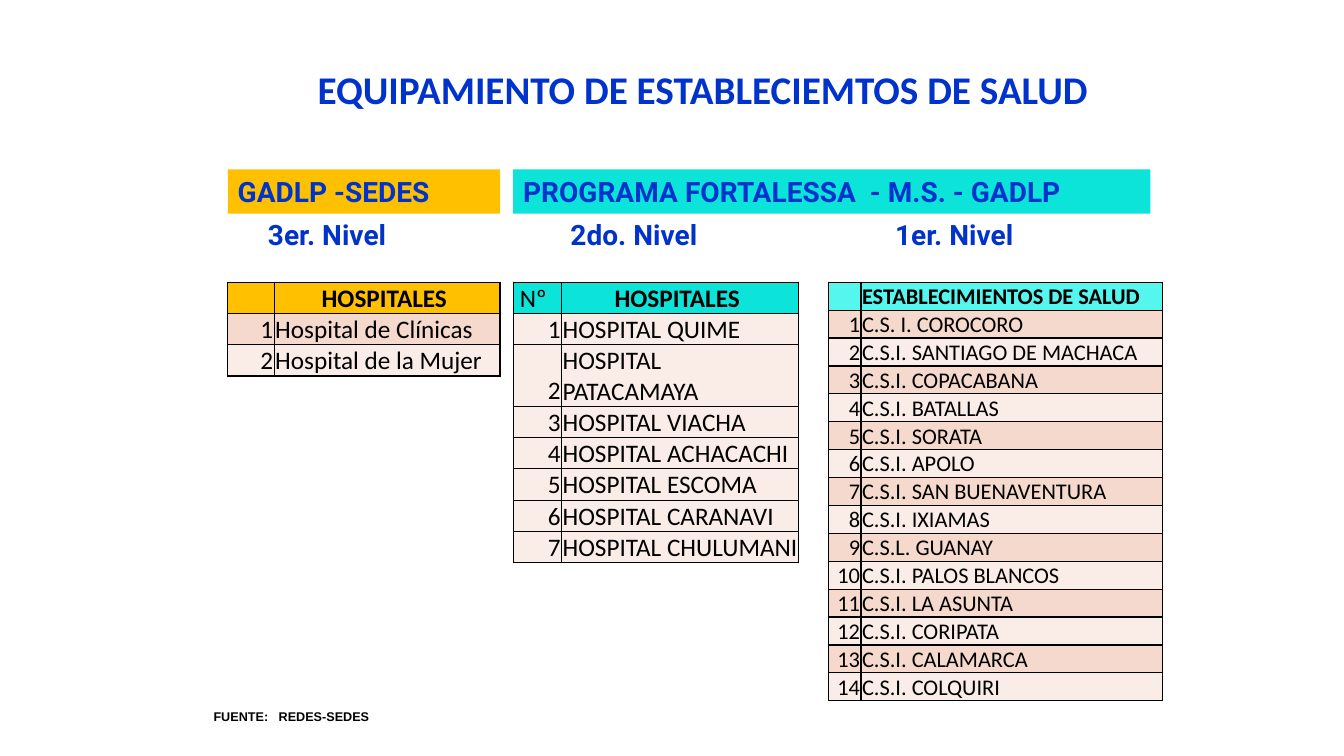
from dataclasses import dataclass

from lxml import etree
from pptx import Presentation
from pptx.dml.color import RGBColor
from pptx.enum.shapes import MSO_SHAPE
from pptx.enum.text import MSO_ANCHOR, MSO_AUTO_SIZE, PP_ALIGN
from pptx.oxml.ns import qn
from pptx.util import Inches, Pt

RECT = MSO_SHAPE.RECTANGLE
TOP, MIDDLE, BOTTOM = MSO_ANCHOR.TOP, MSO_ANCHOR.MIDDLE, MSO_ANCHOR.BOTTOM
LEFT, CENTER, RIGHT = PP_ALIGN.LEFT, PP_ALIGN.CENTER, PP_ALIGN.RIGHT
FIT, FIXED = MSO_AUTO_SIZE.SHAPE_TO_FIT_TEXT, MSO_AUTO_SIZE.NONE


@dataclass(frozen=True)
class Theme:
    """Colours, fonts and type sizes of the slide."""
    blue: str = "0033CC"
    black: str = "000000"
    gold: str = "FFC000"
    teal: str = "0CE4DA"
    aqua: str = "54F6EE"
    rose: str = "F5D9CC"
    pale: str = "FAEDE7"
    body: str = "Calibri"
    head: str = "Roboto"
    note: str = "Arial"
    title: int = 28
    label: int = 20
    large: int = 18
    small: int = 16
    source: int = 9


THEME = Theme()

URBAN = ["Hospital de Clínicas", "Hospital de la Mujer"]
RURAL = ["HOSPITAL " + name for name in (
    "QUIME", "PATACAMAYA", "VIACHA", "ACHACACHI", "ESCOMA", "CARANAVI",
    "CHULUMANI")]
CENTERS = [
    "C.S. I. COROCORO", "C.S.I. SANTIAGO DE MACHACA", "C.S.I. COPACABANA",
    "C.S.I. BATALLAS", "C.S.I. SORATA", "C.S.I. APOLO",
    "C.S.I. SAN BUENAVENTURA", "C.S.I. IXIAMAS", "C.S.L. GUANAY",
    "C.S.I. PALOS BLANCOS", "C.S.I. LA ASUNTA", "C.S.I. CORIPATA",
    "C.S.I. CALAMARCA", "C.S.I. COLQUIRI"]


def style(para, face, size, color, bold=True, align=LEFT):
    """Format one paragraph."""
    para.alignment = align
    font = para.font
    font.name, font.size, font.bold = face, Pt(size), bold
    font.color.rgb = RGBColor.from_string(color)


def add_title(slide, box, text):
    """Place the slide title in its placeholder."""
    title = slide.shapes.title
    title.left, title.top, title.width, title.height = map(Inches, box)
    frame = title.text_frame
    frame.text = text
    frame.word_wrap, frame.auto_size = False, FIXED
    frame.vertical_anchor = TOP
    para = frame.paragraphs[0]
    para.line_spacing = 1.0
    style(para, THEME.body, THEME.title, THEME.blue)


def add_label(slide, box, text, face, size, color, wrap=False):
    """Place a plain line of text."""
    frame = slide.shapes.add_textbox(*map(Inches, box)).text_frame
    frame.text = text
    frame.word_wrap, frame.auto_size = wrap, FIT
    style(frame.paragraphs[0], face, size, color)


def add_banner(slide, box, text, fill):
    """Place a filled heading bar."""
    bar = slide.shapes.add_shape(RECT, *map(Inches, box))
    bar.shadow.inherit = False
    bar.fill.solid()
    bar.fill.fore_color.rgb = RGBColor.from_string(fill)
    bar.line.fill.background()
    frame = bar.text_frame
    frame.text = text
    frame.word_wrap, frame.auto_size = True, FIT
    frame.vertical_anchor = TOP
    style(frame.paragraphs[0], THEME.head, THEME.label, THEME.blue)


def add_border(cell):
    """Draw thin black lines on all sides of a cell."""
    props = cell._tc.get_or_add_tcPr()
    for side in ("a:lnL", "a:lnR", "a:lnT", "a:lnB"):
        line = etree.SubElement(props, qn(side), w=str(Pt(1)))
        paint = etree.SubElement(line, qn("a:solidFill"))
        etree.SubElement(paint, qn("a:srgbClr"), val=THEME.black)


def fill_cell(cell, text, fill, size, bold, align, anchor):
    """Write and format one table cell."""
    add_border(cell)
    cell.fill.solid()
    cell.fill.fore_color.rgb = RGBColor.from_string(fill)
    cell.margin_left = cell.margin_right = cell.margin_top = Inches(0.01)
    cell.margin_bottom = 0
    cell.vertical_anchor = anchor
    cell.text = text
    para = cell.text_frame.paragraphs[0]
    style(para, THEME.body, size, THEME.black, bold, align)
    if not text:
        para._p.get_or_add_endParaRPr().set("sz", str(size * 100))


def add_list(slide, box, first, heads, names, fill, bands, size, align=CENTER):
    """Place a numbered table whose first column has the given width."""
    left, top, width, row = box
    grid = slide.shapes.add_table(
        len(names) + 1, 2, Inches(left), Inches(top), Inches(width),
        Inches(row * (len(names) + 1))).table
    grid.first_row = grid.horz_banding = False
    grid.columns[0].width = Inches(first)
    grid.columns[1].width = Inches(width - first)
    for line in grid.rows:
        line.height = Inches(row)
    fill_cell(grid.cell(0, 0), heads[0], fill, size, False, LEFT, BOTTOM)
    fill_cell(grid.cell(0, 1), heads[1], fill, size, True, align, MIDDLE)
    for num, name in enumerate(names, 1):
        band = bands[(num - 1) % len(bands)]
        fill_cell(grid.cell(num, 0), str(num), band, size, False, RIGHT, BOTTOM)
        fill_cell(grid.cell(num, 1), name, band, size, False, LEFT, BOTTOM)


def build_slide(deck):
    """Compose the slide of health equipment."""
    slide = deck.slides.add_slide(deck.slide_layouts[5])
    add_title(slide, (3.05, 0.6, 8.11, 0.57),
              "EQUIPAMIENTO DE ESTABLECIEMTOS DE SALUD")
    add_banner(slide, (2.26, 1.68, 2.7, 0.44), "GADLP -SEDES", THEME.gold)
    add_banner(slide, (5.09, 1.68, 6.32, 0.44),
               "PROGRAMA FORTALESSA  - M.S. - GADLP", THEME.teal)
    for left, width, text in ((2.56, 1.46, "3er. Nivel"),
                              (5.56, 1.54, "2do. Nivel"),
                              (8.78, 1.46, "1er. Nivel")):
        add_label(slide, (left, 2.11, width, 0.44), text,
                  THEME.head, THEME.label, THEME.blue)
    bands = (THEME.rose, THEME.pale)
    add_list(slide, (2.26, 2.8, 2.7, 0.31), 0.46, ("", "HOSPITALES "),
             URBAN, THEME.gold, bands, THEME.large)
    add_list(slide, (5.09, 2.8, 2.83, 0.31), 0.48, (" Nº", "HOSPITALES "),
             RURAL, THEME.teal, bands[1:], THEME.large)
    add_list(slide, (8.22, 2.8, 3.31, 0.27), 0.32,
             ("", "ESTABLECIMIENTOS DE SALUD"), CENTERS, THEME.aqua, bands,
             THEME.small, LEFT)
    add_label(slide, (2.02, 6.98, 2.13, 0.25), "FUENTE:   REDES-SEDES",
              THEME.note, THEME.source, THEME.black, True)


def main():
    """Build and save the deck."""
    deck = Presentation()
    deck.slide_width, deck.slide_height = Inches(13.33), Inches(7.5)
    build_slide(deck)
    deck.save("out.pptx")


if __name__ == "__main__":
    main()
